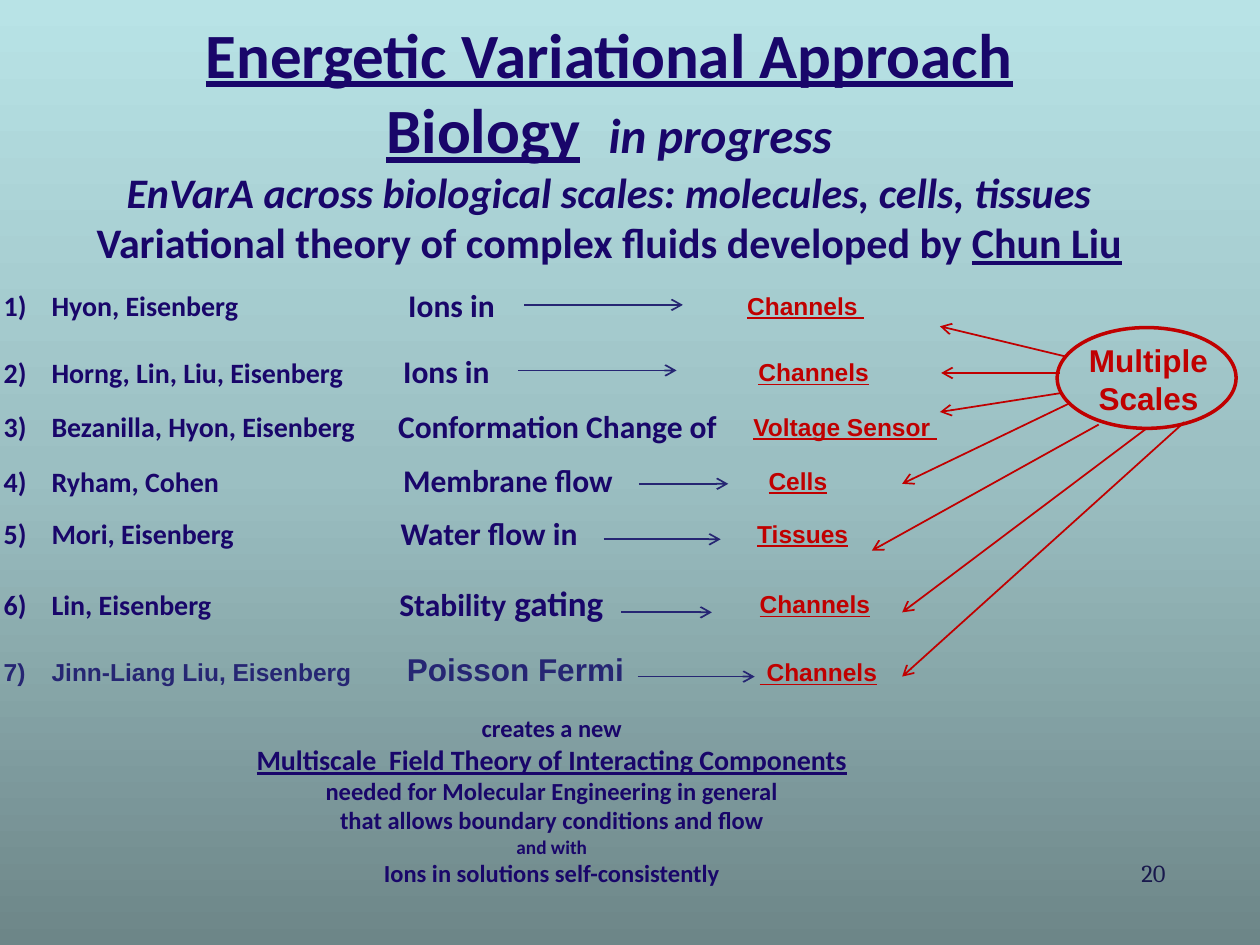
from copy import deepcopy
from dataclasses import dataclass

from pptx import Presentation
from pptx.dml.color import RGBColor
from pptx.enum.shapes import MSO_CONNECTOR, MSO_SHAPE
from pptx.enum.text import MSO_ANCHOR as Anchor, PP_ALIGN as Align
from pptx.oxml.ns import qn
from pptx.util import Emu, Inches, Pt

COLORS = {
    "navy": "19066A", "slate": "262673", "number": "19194D", "red": "C00000",
    "bottom": "6D8688", "middle": "9BBFC2", "top": "B8E3E6",
}
# The slide is a grid of 100 columns by 75 rows of square cells
CELL = Inches(0.1)
DESCENT = {"Calibri": 0.27, "Arial": 0.21}  # share of the text size
NUMBER_INDENT = 3.8
LIST_LEFT = 0.3


@dataclass(frozen=True)
class Words:
    text: str
    size: float
    color: str = "navy"
    font: str = "Calibri"
    bold: bool = True
    italic: bool = False
    underline: bool = False


@dataclass(frozen=True)
class Project:
    baseline: float
    authors: Words
    topic_left: float
    topic: tuple[Words, ...]
    scale_left: float
    scale: str


def cells(count: float) -> Emu:
    return Emu(round(count * CELL))


def rgb(name: str) -> RGBColor:
    return RGBColor.from_string(COLORS[name])


def add_text(slide, left, top, width, height, lines, align=Align.LEFT,
             anchor=Anchor.TOP, inset=(1, 0.5)):
    """Place lines of words in a text box and return its text frame."""
    frame = slide.shapes.add_textbox(*map(cells, (left, top, width, height))).text_frame
    frame.word_wrap = True
    frame.vertical_anchor = anchor
    frame.margin_left = frame.margin_right = cells(inset[0])
    frame.margin_top = frame.margin_bottom = cells(inset[1])
    for index, line in enumerate(lines):
        paragraph = frame.paragraphs[0] if index == 0 else frame.add_paragraph()
        paragraph.alignment = align
        for words in line:
            run = paragraph.add_run()
            run.text = words.text
            font = run.font
            font.name, font.size = words.font, Pt(words.size)
            font.bold, font.italic, font.underline = words.bold, words.italic, words.underline
            font.color.rgb = rgb(words.color)
    return frame


def add_on_baseline(slide, left, baseline, width, line):
    """Place one line so that its letters stand on the baseline."""
    drop = max(DESCENT[words.font] * words.size for words in line) / 7.2
    height = 4
    return add_text(slide, left, baseline + drop - height, width, height, [line],
                    anchor=Anchor.BOTTOM, inset=(0, 0))


def number_paragraph(paragraph, number: int) -> None:
    properties = paragraph._p.get_or_add_pPr()
    properties.set("marL", str(cells(NUMBER_INDENT)))
    properties.set("indent", str(-cells(NUMBER_INDENT)))
    bullet = properties.makeelement(
        qn("a:buAutoNum"), {"type": "arabicParenR", "startAt": str(number)})
    properties.append(bullet)


def add_arrow(slide, start, end, color: str) -> None:
    arrow = slide.shapes.add_connector(
        MSO_CONNECTOR.STRAIGHT, *map(cells, (*start, *end)))
    arrow.line.color.rgb = rgb(color)
    arrow.line.width = Pt(1)
    line = arrow.line._get_or_add_ln()
    line.append(line.makeelement(qn("a:tailEnd"), {"type": "arrow"}))
    properties = line.getparent()
    properties.append(properties.makeelement(qn("a:effectLst"), {}))


def paint_background(slide) -> None:
    fill = slide.background.fill
    fill.gradient()
    fill.gradient_angle = 90
    stops = slide.element.find(".//" + qn("a:gsLst"))
    stops.insert(1, deepcopy(stops[0]))
    for stop, position, name in zip(
            fill.gradient_stops, (0, 0.5, 1), ("bottom", "middle", "top")):
        stop.position = position
        stop.color.rgb = rgb(name)


HEADING = [
    [Words("Energetic Variational Approach", 36, underline=True)],
    [Words("Biology", 36, underline=True), Words("  ", 36),
     Words("in progress", 28, italic=True)],
    [Words("EnVarA across biological scales: molecules, cells, tissues", 24, italic=True)],
    [Words("Variational theory of complex fluids developed by ", 24),
     Words("Chun Liu", 24, underline=True)],
]
PROJECTS = [
    Project(25.0, Words("Hyon, Eisenberg", 16), 32.4, (Words("Ions in", 18),),
            59.3, "Channels "),
    Project(30.3, Words("Horng, Lin, Liu, Eisenberg", 16), 32, (Words("Ions in", 18),),
            60.2, "Channels"),
    Project(34.6, Words("Bezanilla, Hyon, Eisenberg", 16), 31.6,
            (Words("Conformation Change of", 18),), 59.8, "Voltage Sensor "),
    Project(38.9, Words("Ryham, Cohen", 16), 32, (Words("Membrane flow", 18),),
            61, "Cells"),
    Project(43.1, Words("Mori, Eisenberg", 16), 31.8, (Words("Water flow in", 18),),
            60.1, "Tissues"),
    Project(48.7, Words("Lin, Eisenberg", 16), 31.7,
            (Words("Stability", 18), Words(" gating", 20)), 60.3, "Channels"),
    Project(54.1, Words("Jinn-Liang Liu, Eisenberg", 14, "slate", "Arial"), 32.3,
            (Words("Poisson Fermi", 18, "slate", "Arial"),), 60.3, " Channels"),
]
CONCLUSION = [
    [Words("creates a new", 14)],
    [Words("Multiscale  Field Theory of Interacting Components", 16, underline=True)],
    [Words("needed for Molecular Engineering in general", 14)],
    [Words("that allows boundary conditions and flow", 14)],
    [Words("and with", 11)],
    [Words("Ions in solutions self-consistently", 14)],
]
# Left, right and height of the arrows from topic to scale
TOPIC_ARROWS = [
    (41.6, 54.2, 24.2), (41.1, 53.7, 29.4), (50.7, 57.8, 38.4),
    (47.9, 57.2, 42.8), (49.3, 56.5, 48.6), (50.6, 59.9, 53.7),
]
# Start at the ellipse and end at the scale
SCALE_ARROWS = [
    ((84.6, 28.3), (74.6, 25.9)), ((84.1, 29.6), (74.7, 29.6)),
    ((84.2, 31.2), (74.6, 32.7)), ((84.9, 32), (71.6, 38.4)),
    ((87.2, 33.7), (69.2, 43.7)), ((91, 34), (71.6, 48.6)),
    ((94, 33.5), (71.6, 53.7)),
]


def main() -> None:
    deck = Presentation()
    deck.slide_width, deck.slide_height = cells(100), cells(75)
    slide = deck.slides.add_slide(deck.slide_layouts[6])
    paint_background(slide)

    # Heading, conclusion and slide number
    add_text(slide, 1.3, 0.7, 94.1, 21.9, HEADING, Align.CENTER)
    add_text(slide, 4.6, 56.1, 78.4, 18, CONCLUSION, Align.CENTER)
    add_text(slide, 89.6, 67.6, 8.6, 5,
             [[Words("20", 14, "number", "Cambria", bold=False)]])

    # Numbered projects: authors, topic, scale
    for number, project in enumerate(PROJECTS, 1):
        authors = add_on_baseline(slide, LIST_LEFT, project.baseline, 31, [project.authors])
        number_paragraph(authors.paragraphs[0], number)
        add_on_baseline(slide, project.topic_left, project.baseline, 27, project.topic)
        scale = Words(project.scale, 14, "red", "Arial", underline=True)
        add_on_baseline(slide, project.scale_left, project.baseline, 18, [scale])

    for left, right, height in TOPIC_ARROWS:
        add_arrow(slide, (left, height), (right, height), "slate")

    # Ellipse with arrows to every scale
    add_text(slide, 82.3, 26.6, 17.7, 7.1,
             [[Words(word, 18, "red", "Arial")] for word in ("Multiple", "Scales")],
             Align.CENTER)
    ellipse = slide.shapes.add_shape(
        MSO_SHAPE.OVAL, *map(cells, (83.9, 26, 14.2, 8)))
    ellipse.shadow.inherit = False
    ellipse.fill.background()
    ellipse.line.color.rgb = rgb("red")
    ellipse.line.width = Pt(2)
    for start, end in SCALE_ARROWS:
        add_arrow(slide, start, end, "red")

    deck.save("out.pptx")


if __name__ == "__main__":
    main()
